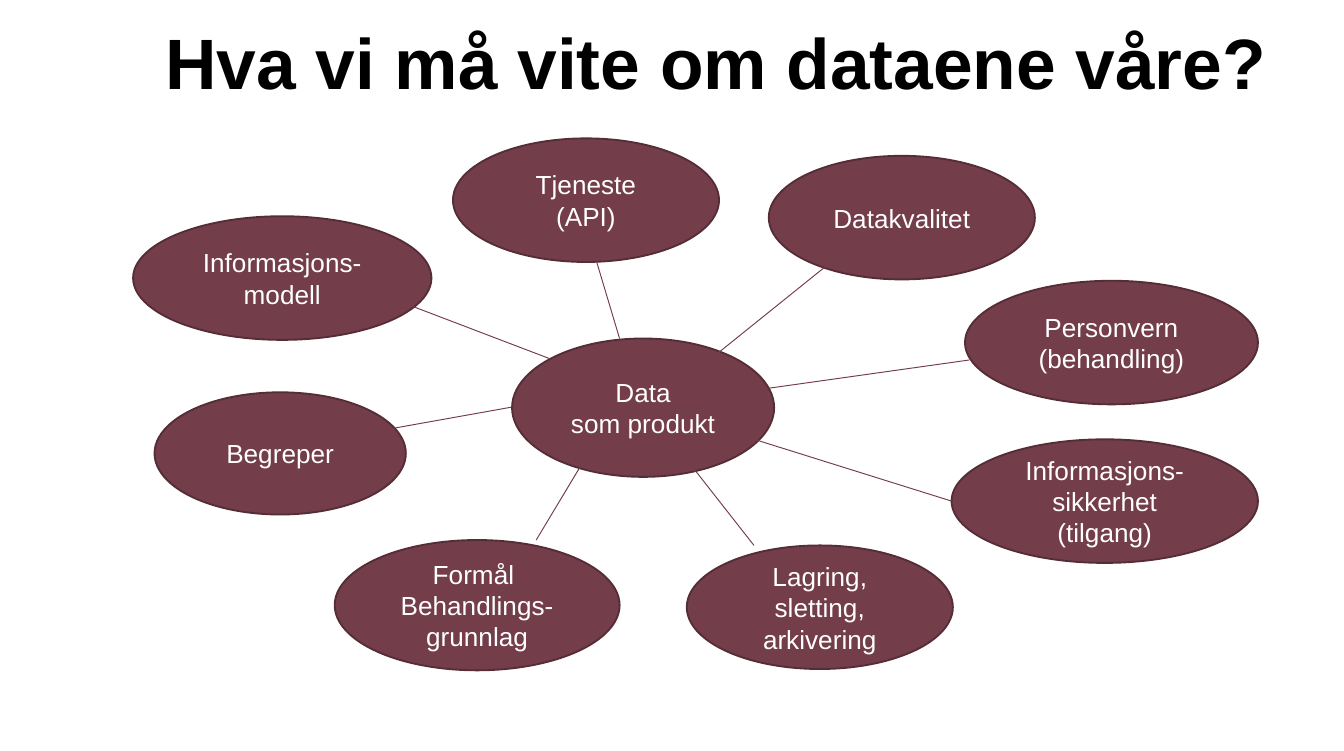
"""Build the slide that maps what to know about data as a product."""
from lxml import etree
from pptx import Presentation
from pptx.dml.color import RGBColor
from pptx.enum.shapes import MSO_CONNECTOR, MSO_SHAPE
from pptx.enum.text import MSO_ANCHOR, PP_ALIGN
from pptx.oxml.ns import qn
from pptx.util import Inches, Pt

OVAL = MSO_SHAPE.OVAL
STRAIGHT = MSO_CONNECTOR.STRAIGHT
MIDDLE = MSO_ANCHOR.MIDDLE
CENTER = PP_ALIGN.CENTER
COLORS = {"plum": "733D4A", "edge": "552D37", "white": "FFFFFF", "black": "000000"}
FONT = "Arial"

prs = Presentation()
prs.slide_width, prs.slide_height = Inches(10), Inches(5.59)
s = prs.slides.add_slide(prs.slide_layouts[6])
UNIT = prs.slide_width / 100


def grid(*cells):
    return [round(cell * UNIT) for cell in cells]


def add_run(p, text, size, color):
    r = p.add_run()
    r.text = text
    r.font.name, r.font.size = FONT, Pt(size)
    r.font.color.rgb = RGBColor.from_string(COLORS[color])
    return r


bubbles = [
    ((38.1, 25.2, 19.5, 10.3), ["Data", "som produkt"]),
    ((71.8, 20.9, 21.8, 9.2), ["Personvern", "(behandling)"]),
    ((70.8, 32.7, 22.8, 9.2), ["Informasjons-sikkerhet", "(tilgang)"]),
    ((33.7, 10.3, 19.8, 9.2), ["Tjeneste", "(API)"]),
    ((57.2, 11.6, 19.8, 9.2), ["Datakvalitet"]),
    ((9.9, 16.1, 22.2, 9.2), ["Informasjons-modell"]),
    ((11.5, 29.2, 18.7, 9.1), ["Begreper"]),
    ((24.9, 40.2, 21.2, 9.7), ["Formål ", "Behandlings-grunnlag"]),
    ((51.1, 40.6, 19.8, 9.2), ["Lagring, sletting, arkivering"]),
]
for box, lines in bubbles:
    sp = s.shapes.add_shape(OVAL, *grid(*box))
    sp.shadow.inherit = False
    sp.fill.solid()
    sp.fill.fore_color.rgb = RGBColor.from_string(COLORS["plum"])
    sp.line.color.rgb = RGBColor.from_string(COLORS["edge"])
    sp.line.width = Pt(1)
    tf = sp.text_frame
    tf.word_wrap = True
    tf.vertical_anchor = MIDDLE
    for i, line in enumerate(lines):
        p = tf.add_paragraph() if i else tf.paragraphs[0]
        p.alignment = CENTER
        add_run(p, line, 14, "white")

spokes = [
    (53.4, 26.3, 61.6, 19.7),
    (46.1, 25.2, 44.4, 19.5),
    (56.1, 32.7, 70.8, 37.3),
    (57.2, 28.9, 72.1, 26.8),
    (44.4, 32.7, 39.9, 40.2),
    (38.1, 30.3, 28.6, 32),
    (40.9, 26.7, 29.9, 22.5),
    (51.4, 34.6, 56.1, 40.6),
]
for ends in spokes:
    spoke = s.shapes.add_connector(STRAIGHT, *grid(*ends))
    spoke.line.color.rgb = RGBColor.from_string(COLORS["plum"])
    spoke.line.width = Pt(0.5)
    etree.SubElement(spoke._element.spPr, qn("a:effectLst"))

title = s.shapes.add_textbox(*grid(12.3, 2.6, 82.1, 7.2))
tf = title.text_frame
tf.word_wrap = True
tf.margin_left = tf.margin_top = tf.margin_right = tf.margin_bottom = 0
p = tf.paragraphs[0]
p.line_spacing = 0.8
r = add_run(p, "Hva vi må vite om dataene våre?", 38.2, "black")
r.font.bold = True

prs.save("out.pptx")
